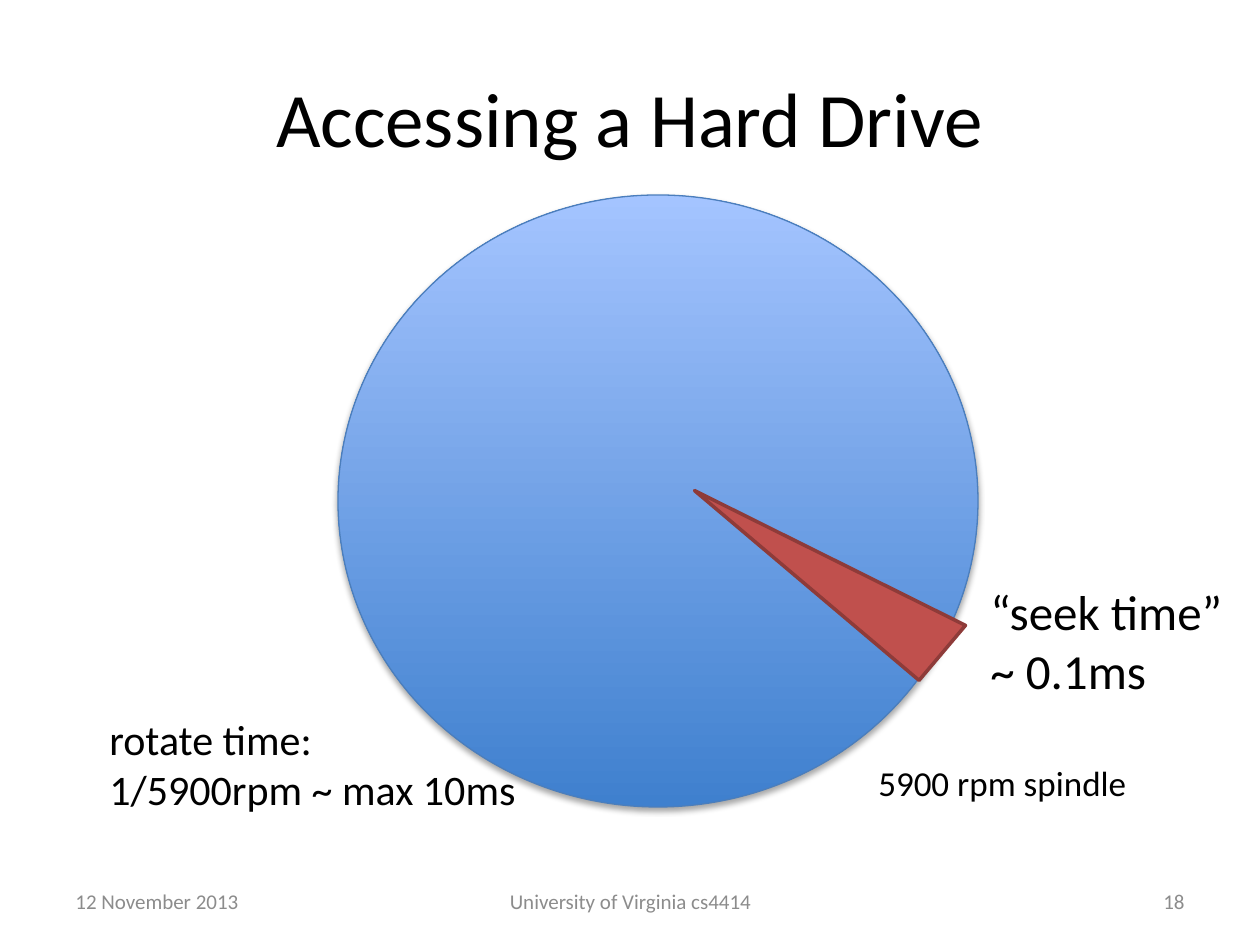
from lxml import etree
from pptx import Presentation
from pptx import util as u
from pptx.dml.color import RGBColor
from pptx.enum import shapes, text
from pptx.oxml.ns import qn

SCALE = 914400 / 126
LEFT, MID, RIGHT = text.PP_ALIGN.LEFT, text.PP_ALIGN.CENTER, text.PP_ALIGN.RIGHT


def px(*vals):
    return [u.Emu(round(v * SCALE)) for v in vals]


def tint(code):
    return RGBColor.from_string(code)


def apply(item, form):
    for name, val in form.items():
        setattr(item, name, val)


def write(shape, words, size, color="000000", align=LEFT, **form):
    frame = shape.text_frame
    frame.text = words
    apply(frame, form)
    for para in frame.paragraphs:
        para.alignment = align
        apply(para.font, {"size": u.Pt(size), "name": "Calibri"})
        para.font.color.rgb = tint(color)


def title(slide, words, box):
    head = slide.shapes.title
    apply(head, dict(zip(("left", "top", "width", "height"), px(*box))))
    write(head, words, 44, align=MID, vertical_anchor=text.MSO_ANCHOR.MIDDLE)


def label(slide, words, box, size):
    note = slide.shapes.add_textbox(*px(*box))
    write(note, words, size, word_wrap=False,
          auto_size=text.MSO_AUTO_SIZE.SHAPE_TO_FIT_TEXT)


def footer(slide, words, left, width, align):
    note = slide.shapes.add_textbox(*px(left, 876, width, 50))
    write(note, words, 12, "8C8C8C", align, word_wrap=True,
          vertical_anchor=text.MSO_ANCHOR.MIDDLE)


def figure(slide, kind, box, edge, weight):
    shape = slide.shapes.add_shape(kind, *px(*box))
    shape.line.color.rgb = tint(edge)
    shape.line.width = u.Pt(weight)
    shape.shadow.inherit = False
    return shape


def shade(shape, color, alpha, blur, dist, angle):
    effects = shape.element.spPr.find(qn("a:effectLst"))
    drop = etree.SubElement(effects, qn("a:outerShdw"), {
        "blurRad": str(u.Pt(blur)), "dist": str(u.Pt(dist)),
        "dir": str(angle * 60000), "rotWithShape": "0"})
    tone = etree.SubElement(drop, qn("a:srgbClr"), val=color)
    etree.SubElement(tone, qn("a:alpha"), val=str(alpha * 1000))


def platter(slide, box):
    disk = figure(slide, shapes.MSO_SHAPE.OVAL, box, "4B7EBC", 0.75)
    disk.fill.gradient()
    disk.fill.gradient_angle = 90
    for stop, (place, code) in zip(disk.fill.gradient_stops,
                                   ((0, "3F80CE"), (1, "A4C4FF"))):
        stop.position = place
        stop.color.rgb = tint(code)
    shade(disk, "000000", 35, 3.1, 1.8, 90)


def wedge(slide, box, turn):
    seek = figure(slide, shapes.MSO_SHAPE.RIGHT_TRIANGLE, box, "8E3B39", 2)
    seek.fill.solid()
    seek.fill.fore_color.rgb = tint("C0504D")
    seek.rotation = turn


def main():
    deck = Presentation()
    deck.slide_width, deck.slide_height = px(1260, 945)
    slide = deck.slides.add_slide(deck.slide_layouts[5])
    title(slide, "Accessing a Hard Drive", (63, 38, 1134, 157))
    footer(slide, "12 November 2013", 63, 294, LEFT)
    footer(slide, "University of Virginia cs4414", 431, 399, MID)
    footer(slide, "18", 903, 294, RIGHT)
    platter(slide, (338, 195, 640, 612))
    label(slide, "5900 rpm spindle", (866, 755, 276, 55), 20)
    wedge(slide, (794, 411, 72, 294), 310.2)
    label(slide, "“seek time”\n~ 0.1ms", (978, 575, 261, 131), 28)
    label(slide, "rotate time:\n1/5900rpm ~ max 10ms", (97, 707, 436, 115), 24)
    deck.save("out.pptx")


if __name__ == "__main__":
    main()
